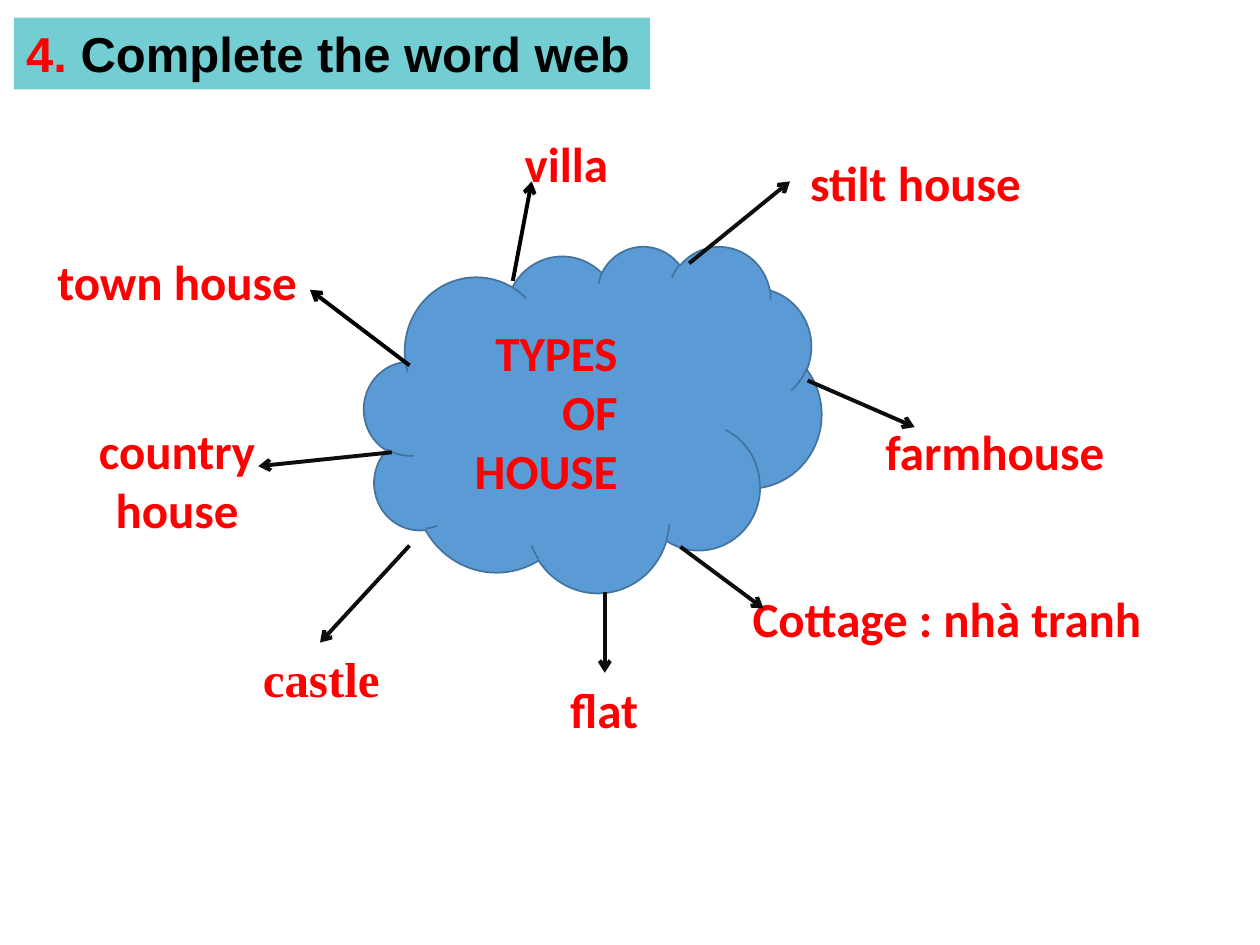
from pptx import Presentation
from pptx.dml.color import RGBColor
from pptx.enum.shapes import MSO_CONNECTOR as Connector, MSO_SHAPE as Shape
from pptx.enum.text import MSO_ANCHOR as Anchor, PP_ALIGN as Align
from pptx.oxml.ns import qn
from pptx.util import Inches, Pt
from lxml.etree import SubElement

RED = RGBColor(0xFF, 0x00, 0x00)
BLACK = RGBColor(0x00, 0x00, 0x00)
NEAR_BLACK = RGBColor(0x0D, 0x0D, 0x0D)
TEAL = RGBColor(0x73, 0xCE, 0xD3)
BLUE = RGBColor(0x5B, 0x9B, 0xD5)
DARK_BLUE = RGBColor(0x43, 0x73, 0x9E)

CLOUD_BOX = (2.89, 1.95, 3.63, 2.75)
BRANCHES = [
    ("town house", (0.35, 1.95, 2.11, 0.57), (3.25, 2.9), (2.46, 2.3), BLACK),
    ("villa", (3.83, 1.01, 1.33, 0.57), (4.07, 2.23), (4.22, 1.44), BLACK),
    ("country house", (0.23, 3.29, 2.35, 1.04), (3.11, 3.59), (2.05, 3.7), NEAR_BLACK),
    ("flat", (4.13, 5.34, 1.33, 0.57), (4.8, 4.7), (4.8, 5.34), NEAR_BLACK),
    ("farmhouse", (6.9, 3.3, 1.99, 0.57), (6.41, 3.02), (7.26, 3.39), NEAR_BLACK),
    ("Cottage : nhà tranh", (5.78, 4.62, 3.47, 0.57), (5.4, 4.34), (6.06, 4.83), NEAR_BLACK),
    ("stilt house", (6.27, 1.16, 1.99, 0.57), (5.47, 2.09), (6.27, 1.44), NEAR_BLACK),
    ("castle", (1.98, 5.1, 1.14, 0.57), (3.25, 4.33), (2.54, 5.1), NEAR_BLACK),
]


def to_inches(lengths):
    """Turn plain numbers into lengths."""
    return [Inches(length) for length in lengths]


def add_words(paragraph, words, color=RED, font="Calibri"):
    """Add one bold run to a paragraph."""
    run = paragraph.add_run()
    run.text = words
    run.font.name = font
    run.font.size = Pt(28)
    run.font.bold = True
    run.font.color.rgb = color


def add_title(slide, box):
    """Place the heading on its teal band."""
    band = slide.shapes.add_shape(Shape.RECTANGLE, *to_inches(box))
    band.shadow.inherit = False
    band.fill.solid()
    band.fill.fore_color.rgb = TEAL
    band.line.fill.background()
    band.text_frame.word_wrap = False
    band.text_frame.vertical_anchor = Anchor.TOP
    heading = band.text_frame.paragraphs[0]
    heading.alignment = Align.LEFT
    add_words(heading, "4. ", RED, "Arial")
    add_words(heading, "Complete the word web", BLACK, "Arial")


def add_topic(slide, box):
    """Place the central cloud with the topic of the web."""
    cloud = slide.shapes.add_shape(Shape.CLOUD, *to_inches(box))
    cloud.shadow.inherit = False
    cloud.fill.solid()
    cloud.fill.fore_color.rgb = BLUE
    cloud.line.color.rgb = DARK_BLUE
    cloud.line.width = Pt(1)
    frame = cloud.text_frame
    frame.word_wrap = True
    frame.vertical_anchor = Anchor.MIDDLE
    frame.margin_right = Inches(0.86)
    topic = frame.paragraphs[0]
    topic.alignment = Align.RIGHT
    add_words(topic, "TYPES OF HOUSE")


def add_arrow(slide, start, end, color):
    """Draw an arrow from the cloud towards a word."""
    arrow = slide.shapes.add_connector(Connector.STRAIGHT, *to_inches(start + end))
    arrow.line.color.rgb = color
    arrow.line.width = Pt(2.25)
    SubElement(arrow.line._get_or_add_ln(), qn("a:tailEnd"), type="arrow")
    SubElement(arrow._element.spPr, qn("a:effectLst"))


def add_branch(slide, word, box, start, end, color):
    """Place a house type and the arrow that leads to it."""
    label = slide.shapes.add_textbox(*to_inches(box))
    label.text_frame.word_wrap = True
    paragraph = label.text_frame.paragraphs[0]
    paragraph.alignment = Align.CENTER
    add_words(paragraph, word, font="Times New Roman" if word == "castle" else "Calibri")
    add_arrow(slide, start, end, color)


def main():
    """Build the word web slide."""
    deck = Presentation()
    deck.slide_width, deck.slide_height = Inches(10), Inches(7.5)
    slide = deck.slides.add_slide(deck.slide_layouts[6])
    add_title(slide, (0.11, 0.14, 5.05, 0.57))
    add_topic(slide, CLOUD_BOX)
    for branch in BRANCHES:
        add_branch(slide, *branch)
    deck.save("out.pptx")


if __name__ == "__main__":
    main()
